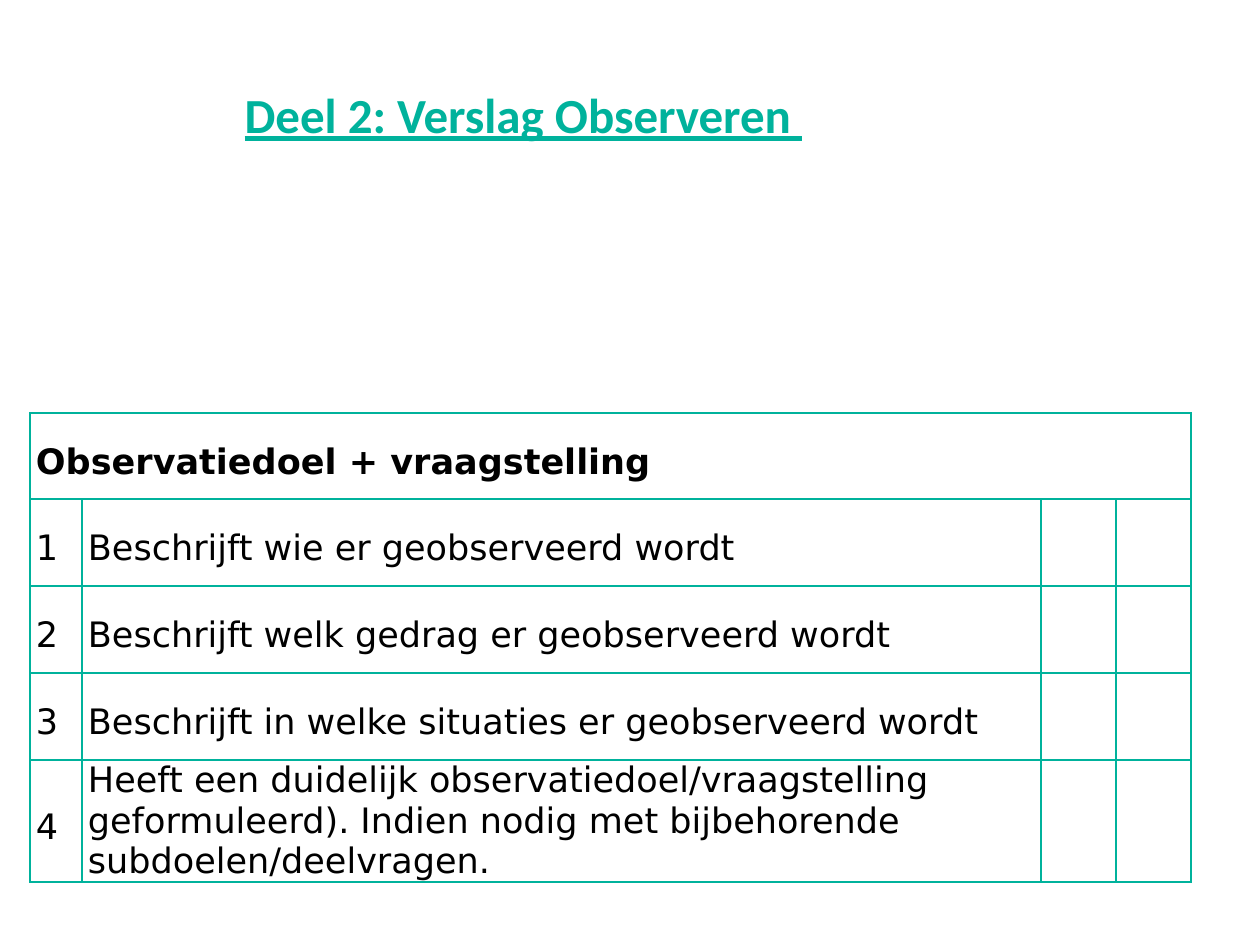
from dataclasses import dataclass

import lxml.etree
import pptx
import pptx.dml.color
import pptx.enum.text
import pptx.oxml.ns
import pptx.util

PX = pptx.util.Inches(1) // 126
TEAL = "00B29C"
BLACK = "000000"
COLUMN_WIDTHS = [52, 959, 75, 75]


@dataclass
class Criterion:
    number: str
    text: str
    height: int = 87
    line_spacing: float = 1.3


CRITERIA = [
    Criterion("1", "Beschrijft wie er geobserveerd wordt"),
    Criterion("2", "Beschrijft welk gedrag er geobserveerd wordt"),
    Criterion("3", "Beschrijft in welke situaties er geobserveerd wordt"),
    Criterion("4", "Heeft een duidelijk observatiedoel/vraagstelling geformuleerd). "
              "Indien nodig met bijbehorende subdoelen/deelvragen.", 122, 1.0),
]


def px(n: int) -> int:
    return n * PX


def rgb(color: str) -> pptx.dml.color.RGBColor:
    return pptx.dml.color.RGBColor.from_string(color)


def set_font(p, name: str, size: int, color: str, bold: bool) -> None:
    p.font.name = name
    p.font.size = pptx.util.Pt(size)
    p.font.bold = bold
    p.font.color.rgb = rgb(color)


def add_borders(cell, color: str, width: float) -> None:
    """Outline a cell; the lines must precede its fill in the XML."""
    qn = pptx.oxml.ns.qn
    tc_pr = cell._tc.get_or_add_tcPr()
    for i, side in enumerate(("lnL", "lnR", "lnT", "lnB")):
        ln = lxml.etree.Element(qn(f"a:{side}"), w=str(pptx.util.Pt(width)))
        fill = lxml.etree.SubElement(ln, qn("a:solidFill"))
        lxml.etree.SubElement(fill, qn("a:srgbClr"), val=color)
        tc_pr.insert(i, ln)


def write_cell(cell, text: str, line_spacing: float = 1.3, bold: bool = False) -> None:
    p = cell.text_frame.paragraphs[0]
    p.text = text
    p.line_spacing = line_spacing
    set_font(p, "DejaVu Sans", 20, BLACK, bold)


def add_title(slide, text: str) -> None:
    sp = slide.shapes.title
    sp.left, sp.top, sp.width, sp.height = px(232), px(32), px(964), px(118)
    tf = sp.text_frame
    tf.text = text
    tf.vertical_anchor = pptx.enum.text.MSO_ANCHOR.BOTTOM
    p = tf.paragraphs[0]
    p.alignment = pptx.enum.text.PP_ALIGN.LEFT
    set_font(p, "Calibri", 28, TEAL, True)
    p.font.underline = True


def add_criteria_table(slide, heading: str, criteria: list[Criterion]) -> None:
    heights = [86] + [c.height for c in criteria]
    table = slide.shapes.add_table(
        len(heights), len(COLUMN_WIDTHS), px(30), px(413),
        px(sum(COLUMN_WIDTHS)), px(sum(heights))).table
    table.first_row = table.horz_banding = False
    for column, width in zip(table.columns, COLUMN_WIDTHS):
        column.width = px(width)
    for row, height in zip(table.rows, heights):
        row.height = px(height)
    for cell in table.iter_cells():
        cell.fill.background()
        cell.vertical_anchor = pptx.enum.text.MSO_ANCHOR.MIDDLE
        cell.margin_left = cell.margin_right = px(6)
        cell.margin_top = cell.margin_bottom = 0
        add_borders(cell, TEAL, 1)

    table.cell(0, 0).merge(table.cell(0, len(COLUMN_WIDTHS) - 1))
    write_cell(table.cell(0, 0), heading, bold=True)
    for i, c in enumerate(criteria, start=1):
        write_cell(table.cell(i, 0), c.number)
        write_cell(table.cell(i, 1), c.text, c.line_spacing)


def main() -> None:
    prs = pptx.Presentation()
    prs.slide_width, prs.slide_height = px(1260), px(945)
    slide = prs.slides.add_slide(prs.slide_layouts.get_by_name("Title Only"))
    add_title(slide, "Deel 2: Verslag Observeren ")
    add_criteria_table(slide, "Observatiedoel + vraagstelling", CRITERIA)
    prs.save("out.pptx")


if __name__ == "__main__":
    main()
